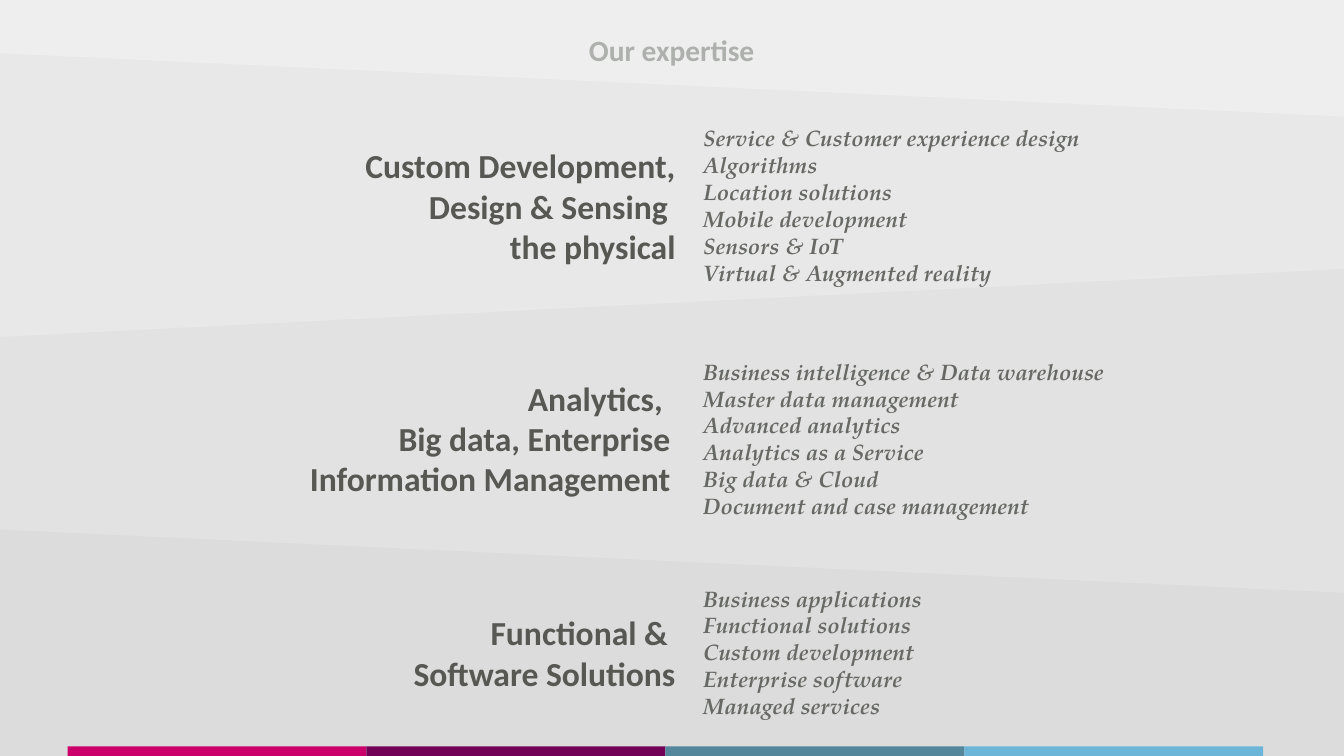
import dataclasses

import lxml.etree
import pptx
import pptx.dml.color
import pptx.enum.shapes
import pptx.enum.text
import pptx.oxml.ns
import pptx.util

ALIGN = pptx.enum.text.PP_ALIGN
ANCHOR = pptx.enum.text.MSO_ANCHOR


@dataclasses.dataclass(frozen=True)
class Theme:
    background: str = "EEEEEE"
    band: str = "313231"
    band_opacity: int = 3
    bars: tuple = ("CC006A", "720057", "54879C", "6BB6D8")
    title: tuple = ("Calibri", 42, "ADB0AD", False)
    heading: tuple = ("Calibri", 48, "575754", False)
    topics: tuple = ("TeX Gyre Pagella", 32, "676965", True)


class SlideBuilder:
    def __init__(self, deck, theme):
        self.deck = deck
        self.theme = theme
        self.page = deck.slides.add_slide(deck.slide_layouts[5])
        fill = self.page.background.fill
        fill.solid()
        fill.fore_color.rgb = self.color(theme.background)

    def color(self, value):
        return pptx.dml.color.RGBColor.from_string(value)

    def place(self, left, top, width, height):
        across, down = self.deck.slide_width / 100, self.deck.slide_height / 100
        return [round(v) for v in (left * across, top * down, width * across, height * down)]

    def set_text(self, box, paragraphs, style, align, anchor, inset=0.1):
        frame = box.text_frame
        frame.word_wrap = True
        frame.auto_size = pptx.enum.text.MSO_AUTO_SIZE.NONE
        frame.vertical_anchor = anchor
        frame.margin_left = frame.margin_right = pptx.util.Inches(inset)
        frame.margin_top = frame.margin_bottom = pptx.util.Inches(inset / 2)
        frame.text = "\n".join(paragraphs)
        name, size, color, italic = style
        for para in frame.paragraphs:
            para.alignment = align
            para.font.name = name
            para.font.size = pptx.util.Pt(size)
            para.font.color.rgb = self.color(color)
            para.font.bold = True
            para.font.italic = italic

    def title(self, text, area):
        box = self.page.shapes.title
        box.left, box.top, box.width, box.height = self.place(*area)
        self.set_text(box, [text], self.theme.title, ALIGN.CENTER, ANCHOR.MIDDLE)
        box.text_frame.paragraphs[0].line_spacing = 0.9

    def heading(self, text, area, inset):
        box = self.page.shapes.add_textbox(*self.place(*area))
        self.set_text(box, [text], self.theme.heading, ALIGN.RIGHT, ANCHOR.MIDDLE, inset)

    def topics(self, lines, area):
        box = self.page.shapes.add_textbox(*self.place(*area))
        self.set_text(box, lines, self.theme.topics, ALIGN.LEFT, ANCHOR.TOP)

    def rectangle(self, area, color):
        shape = self.page.shapes.add_shape(
            pptx.enum.shapes.MSO_SHAPE.RECTANGLE, *self.place(*area))
        shape.shadow.inherit = False
        shape.fill.solid()
        shape.fill.fore_color.rgb = self.color(color)
        shape.line.fill.background()
        return shape

    def band(self, area, angle):
        shape = self.rectangle(area, self.theme.band)
        shape.rotation = angle
        tint = shape.element.find(".//" + pptx.oxml.ns.qn("a:srgbClr"))
        alpha = lxml.etree.SubElement(tint, pptx.oxml.ns.qn("a:alpha"))
        alpha.set("val", str(self.theme.band_opacity * 1000))

    def color_strip(self, left, top, width, height):
        for index, color in enumerate(self.theme.bars):
            self.rectangle((left + index * width, top, width, height), color)


BANDS = [
    ((-4.16, 11.4, 110.73, 105.93), 2.7),
    ((-4.8, 40.07, 110.73, 78.33), 357.1),
    ((-5.29, 74.27, 110.73, 45.13), 2.7),
]

EXPERTISE = [
    ("Custom Development, Design & Sensing \vthe physical", 18.6, 0.1,
     ["Service & Customer experience design", "Algorithms", "Location solutions",
      "Mobile development", "Sensors & IoT", "Virtual & Augmented reality"], 16.13, 40.62),
    ("Analytics, \vBig data, Enterprise Information Management", 49.33, 0.2,
     ["Business intelligence & Data warehouse", "Master data management",
      "Advanced analytics", "Analytics as a Service", "Big data & Cloud",
      "Document and case management"], 47, 31.92),
    ("Functional & \vSoftware Solutions", 77.67, 0.1,
     ["Business applications", "Functional solutions", "Custom development",
      "Enterprise software", "Managed services"], 77, 27.98),
]


def main():
    deck = pptx.Presentation()
    deck.slide_width = pptx.util.Inches(26.66)
    deck.slide_height = pptx.util.Inches(15)
    builder = SlideBuilder(deck, Theme())
    for area, angle in BANDS:
        builder.band(area, angle)
    builder.title("Our expertise", (6.86, 0, 86.23, 13.87))
    for heading, heading_top, inset, topics, topics_top, topics_width in EXPERTISE:
        builder.heading(heading, (20.93, heading_top, 29.71, 17.27), inset)
        topics_height = 0.6 + 3.6 * len(topics)
        builder.topics(topics, (51.95, topics_top, topics_width, topics_height))
    builder.color_strip(5.03, 98.73, 22.24, 1.27)
    deck.save("out.pptx")


if __name__ == "__main__":
    main()
